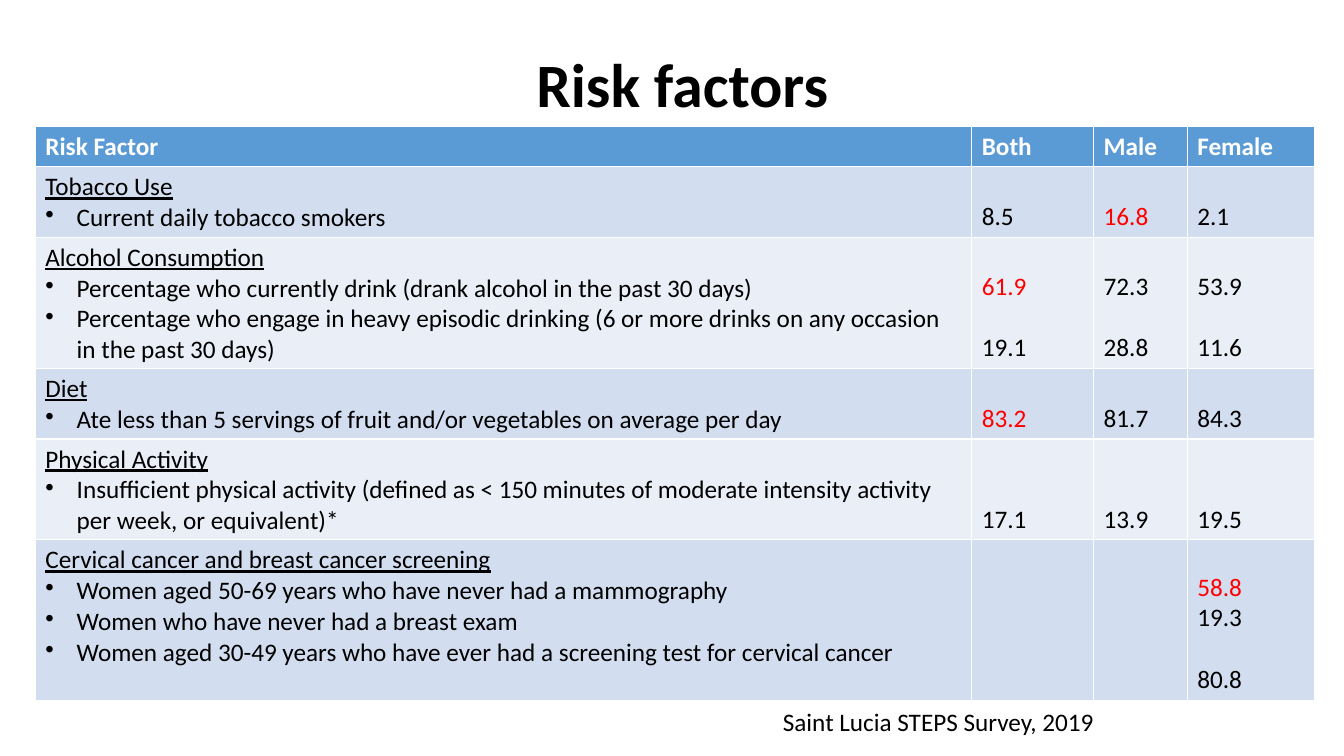
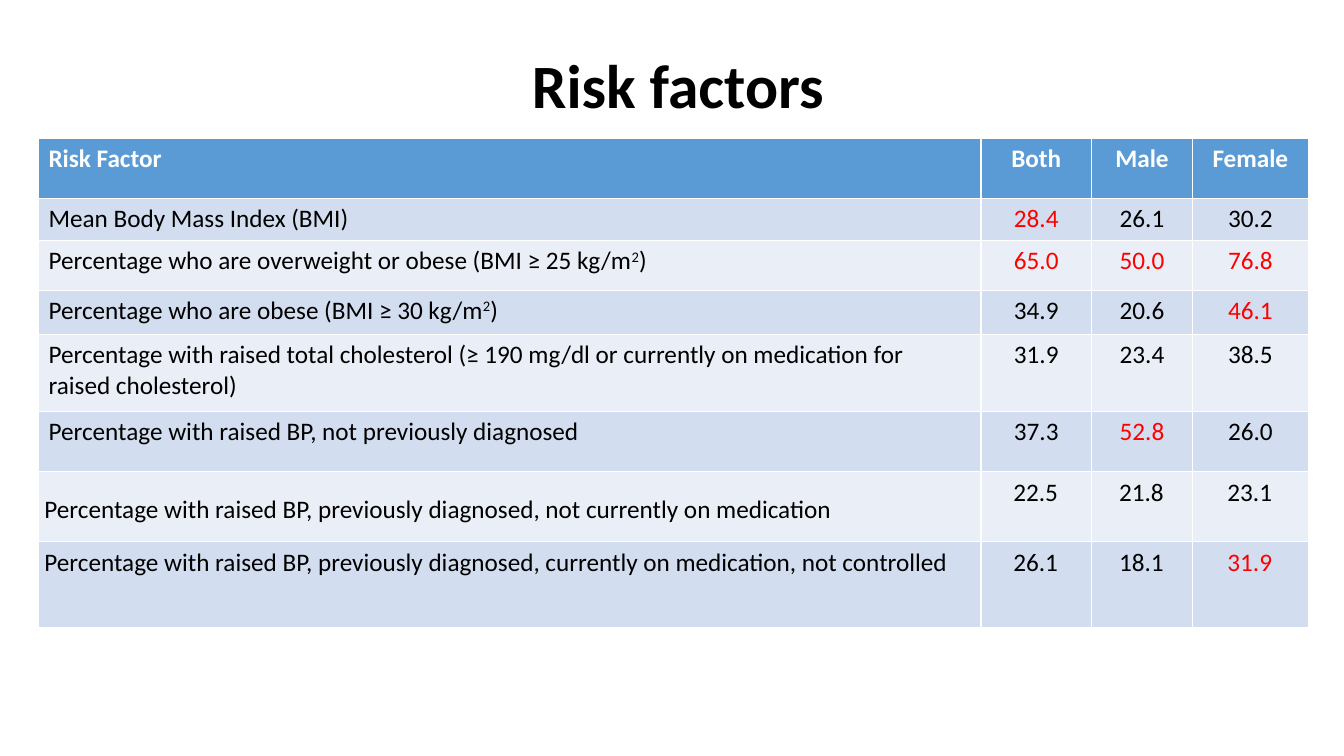
from dataclasses import dataclass

from lxml import etree
from pptx import Presentation
from pptx.dml.color import RGBColor
from pptx.enum.text import MSO_ANCHOR, PP_ALIGN
from pptx.oxml.ns import qn
from pptx.util import Cm, Pt

LEFT, CENTER = PP_ALIGN.LEFT, PP_ALIGN.CENTER
TOP, MIDDLE, BOTTOM = MSO_ANCHOR.TOP, MSO_ANCHOR.MIDDLE, MSO_ANCHOR.BOTTOM


@dataclass(frozen=True)
class Theme:
    """Colours, font and type sizes of the deck."""
    font: str = "Calibri"
    title: int = 44
    body: int = 18
    line: int = 22
    ink: str = "000000"
    paper: str = "FFFFFF"
    alert: str = "FF0000"
    head: str = "5B9BD5"
    bands: tuple = ("D2DEEF", "EAEFF7")


class Red(str):
    """A value shown in the alert colour."""


THEME = Theme()
HEADS = ("Risk Factor", "Both", "Male", "Female")

HABITS = (
    (1.75, ("Tobacco Use", "Current daily tobacco smokers"),
     ("8.5",), (Red("16.8"),), ("2.1",)),
    (3.28, ("Alcohol Consumption",
            "Percentage who currently drink (drank alcohol in the past 30 days)",
            "Percentage who engage in heavy episodic drinking "
            "(6 or more drinks on any occasion in the past 30 days)"),
     (Red("61.9"), None, "19.1"), ("72.3", None, "28.8"), ("53.9", None, "11.6")),
    (1.75, ("Diet",
            "Ate less than 5 servings of fruit and/or vegetables on average per day"),
     (Red("83.2"),), ("81.7",), ("84.3",)),
    (2.51, ("Physical Activity",
            "Insufficient physical activity (defined as < 150 minutes of "
            "moderate intensity activity per week, or equivalent)*"),
     ("17.1",), ("13.9",), ("19.5",)),
    (4.04, ("Cervical cancer and breast cancer screening",
            "Women aged 50-69 years who have never had a mammography",
            "Women who have never had a breast exam",
            "Women aged 30-49 years who have ever had a screening test for cervical cancer"),
     (), (), (Red("58.8"), "19.3", None, "80.8")),
)

BODY = (
    (1.07, "Mean Body Mass Index (BMI)", Red("28.4"), "26.1", "30.2"),
    (1.24, "Percentage who are overweight or obese (BMI ≥ 25 kg/m^2)",
     Red("65.0"), Red("50.0"), Red("76.8")),
    (1.12, "Percentage who are obese (BMI ≥ 30 kg/m^2)", "34.9", "20.6", Red("46.1")),
    (1.93, "Percentage with raised total cholesterol "
           "(≥ 190 mg/dl or currently on medication for raised cholesterol)",
     "31.9", "23.4", "38.5"),
    (1.52, "Percentage with raised BP, not previously diagnosed",
     "37.3", Red("52.8"), "26.0"),
    (1.76, "Percentage with raised BP, previously diagnosed, not currently on medication",
     "22.5", "21.8", "23.1"),
    (2.18, "Percentage with raised BP, previously diagnosed, "
           "currently on medication, not controlled",
     "26.1", "18.1", Red("31.9")),
)


def style(para, size=THEME.body, color=THEME.ink, bold=False, align=LEFT):
    """Set the font and alignment of a paragraph."""
    font = para.font
    font.name, font.size, font.bold = THEME.font, Pt(size), bold
    font.color.rgb = RGBColor.from_string(color)
    para.alignment = align


def write(para, text, **looks):
    """Write text, raising the character after a caret."""
    base, _, rest = text.partition("^")
    para.add_run().text = base
    if rest:
        power = para.add_run()
        power.text = rest[0]
        power.font._element.set("baseline", "30000")
        para.add_run().text = rest[1:]
    style(para, **looks)


def bullet(para):
    """Give a paragraph a hanging bullet."""
    props = para._p.get_or_add_pPr()
    props.set("marL", str(Cm(0.79)))
    props.set("indent", str(-Cm(0.79)))
    mark = etree.Element(qn("a:buChar"), char="•")
    props.insert_element_before(mark, "a:tabLst", "a:defRPr", "a:extLst")


def lines(frame, texts):
    """Yield a paragraph and its text, turning each None into a gap."""
    para, gap = frame.paragraphs[0], 0
    for index, text in enumerate(texts):
        if text is None:
            gap += THEME.line
            continue
        if index:
            para = frame.add_paragraph()
        para.space_before, gap = Pt(gap), 0
        yield para, text


def topic(cell, texts):
    """Fill a cell with an underlined heading and its bullets."""
    for index, (para, text) in enumerate(lines(cell.text_frame, texts)):
        write(para, text)
        if index:
            bullet(para)
        else:
            para.font.underline = True


def values(cell, texts, align=LEFT):
    """Fill a cell with values, one on each line."""
    for para, text in lines(cell.text_frame, texts):
        color = THEME.alert if isinstance(text, Red) else THEME.ink
        write(para, text, color=color, align=align)


def paint(cell, color):
    """Fill a cell with one colour."""
    cell.fill.solid()
    cell.fill.fore_color.rgb = RGBColor.from_string(color)


def grid(slide, left, top, widths, heights, align=LEFT):
    """Add a banded table with its header row."""
    frame = slide.shapes.add_table(
        len(heights), len(widths), Cm(left), Cm(top), Cm(sum(widths)), Cm(sum(heights)))
    table = frame.table
    for column, width in zip(table.columns, widths):
        column.width = Cm(width)
    for index, (row, height) in enumerate(zip(table.rows, heights)):
        row.height = Cm(height)
        for cell in row.cells:
            paint(cell, THEME.bands[(index - 1) % 2] if index else THEME.head)
    for index, text in enumerate(HEADS):
        write(table.cell(0, index).text_frame.paragraphs[0], text, color=THEME.paper,
              bold=True, align=align if index else LEFT)
    return table


def tighten(row, anchor):
    """Narrow the margins of a row and open its line spacing."""
    for index, cell in enumerate(row.cells):
        cell.margin_left = Cm(0 if index else 0.15)
        cell.margin_top, cell.margin_right, cell.margin_bottom = Cm(0.1), Cm(0.03), 0
        cell.vertical_anchor = TOP if index else anchor
        cell.text_frame.paragraphs[0].line_spacing = 1.07


def label(slide, text, left, top, width, height, anchor=TOP, **looks):
    """Add a wrapped text box of one paragraph."""
    frame = slide.shapes.add_textbox(Cm(left), Cm(top), Cm(width), Cm(height)).text_frame
    frame.word_wrap, frame.vertical_anchor = True, anchor
    write(frame.paragraphs[0], text, **looks)
    return frame.paragraphs[0]


def begin(deck, left, top, height):
    """Add a blank slide with the shared title."""
    slide = deck.slides.add_slide(deck.slide_layouts[6])
    para = label(slide, "Risk factors", left, top, 27.94, height, MIDDLE,
                 size=THEME.title, bold=True, align=CENTER)
    para.line_spacing = 0.9
    return slide


def habits(deck):
    """Build the slide of behaviours and screening."""
    slide = begin(deck, 3.23, 0.66, 3.1)
    heights = [1.02] + [row[0] for row in HABITS]
    table = grid(slide, 0.89, 3.18, (23.6, 3.07, 2.36, 3.2), heights)
    for row, (_, texts, *groups) in enumerate(HABITS, 1):
        topic(table.cell(row, 0), texts)
        for column, group in enumerate(groups, 1):
            cell = table.cell(row, column)
            cell.vertical_anchor = BOTTOM
            values(cell, group)
    label(slide, "Saint Lucia STEPS Survey, 2019", 19.48, 17.68, 11.68, 1.02)


def body(deck):
    """Build the slide of body measures."""
    slide = begin(deck, 3.12, 0, 4.47)
    heights = [1.52] + [row[0] for row in BODY]
    table = grid(slide, 0.97, 3.48, (23.75, 2.79, 2.54, 2.92), heights, CENTER)
    for row, (_, *texts) in enumerate(BODY, 1):
        for column, text in enumerate(texts):
            values(table.cell(row, column), [text], CENTER if column else LEFT)
    tighten(table.rows[6], MIDDLE)
    tighten(table.rows[7], TOP)


def main():
    """Build and save the deck."""
    deck = Presentation()
    deck.slide_width, deck.slide_height = Cm(33.87), Cm(19.05)
    habits(deck)
    body(deck)
    deck.save("out.pptx")


if __name__ == "__main__":
    main()
